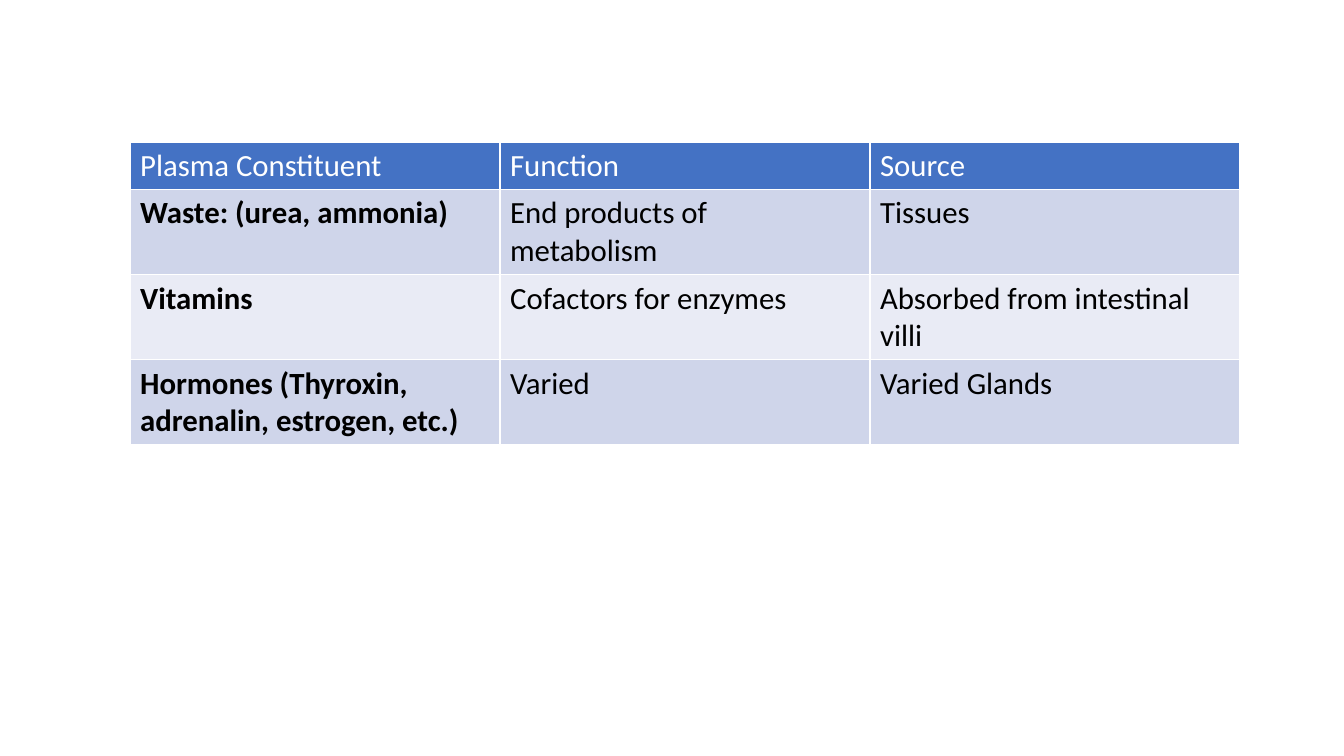
"""Build a slide with a table of plasma constituents, functions and sources."""
from dataclasses import dataclass

from pptx import Presentation
from pptx import util as u
from pptx.dml.color import RGBColor

WHITE = RGBColor(0xFF, 0xFF, 0xFF)
BLACK = RGBColor(0x00, 0x00, 0x00)
HEADER_BLUE = RGBColor(0x44, 0x72, 0xC4)
BAND_DARK = RGBColor(0xCF, 0xD5, 0xEA)
BAND_LIGHT = RGBColor(0xE9, 0xEB, 0xF5)

LEFT, TOP, COLUMN_WIDTH = u.Inches(1.29), u.Inches(1.41), u.Inches(3.67)
HEADER_HEIGHT, BODY_HEIGHT = u.Inches(0.47), u.Inches(0.84)


@dataclass(frozen=True)
class Constituent:
    name: str
    function: str
    source: str

    def cells(self) -> tuple[str, str, str]:
        return self.name, self.function, self.source


ROWS = (
    Constituent("Plasma Constituent", "Function", "Source"),
    Constituent("Waste: (urea, ammonia)", "End products of metabolism", "Tissues"),
    Constituent("Vitamins", "Cofactors for enzymes", "Absorbed from intestinal villi"),
    Constituent("Hormones (Thyroxin, adrenalin, estrogen, etc.)", "Varied", "Varied Glands"),
)


def fill_cell(cell, words: str, fill: RGBColor, ink: RGBColor, bold: bool) -> None:
    cell.fill.solid()
    cell.fill.fore_color.rgb = fill
    cell.text_frame.text = words
    font = cell.text_frame.paragraphs[0].runs[0].font
    font.name, font.size, font.bold = "Calibri", u.Pt(22), bold
    font.color.rgb = ink


def draw_table(page, rows: tuple[Constituent, ...]) -> None:
    columns = len(rows[0].cells())
    height = HEADER_HEIGHT + BODY_HEIGHT * (len(rows) - 1)
    table = page.shapes.add_table(
        len(rows), columns, LEFT, TOP, COLUMN_WIDTH * columns, height
    ).table
    for column in table.columns:
        column.width = COLUMN_WIDTH
    for r, constituent in enumerate(rows):
        header = r == 0
        table.rows[r].height = HEADER_HEIGHT if header else BODY_HEIGHT
        band = BAND_DARK if r % 2 else BAND_LIGHT
        fill, ink = (HEADER_BLUE, WHITE) if header else (band, BLACK)
        for c, words in enumerate(constituent.cells()):
            fill_cell(table.cell(r, c), words, fill, ink, bold=not header and c == 0)


def main() -> None:
    deck = Presentation()
    deck.slide_width, deck.slide_height = u.Inches(13.33), u.Inches(7.5)
    page = deck.slides.add_slide(deck.slide_layouts[6])
    draw_table(page, ROWS)
    deck.save("out.pptx")


if __name__ == "__main__":
    main()
